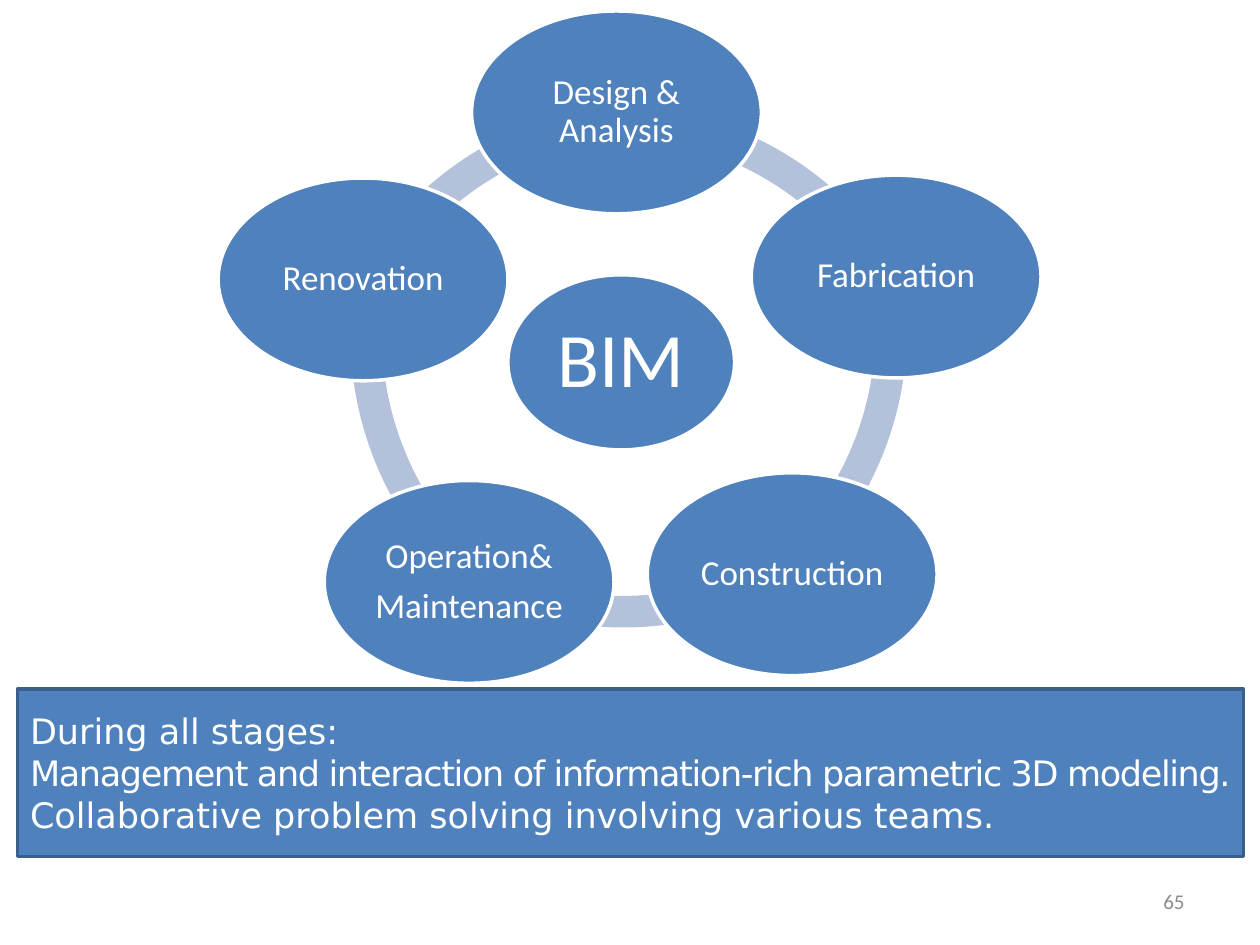
from pptx import Presentation
from pptx.dml.color import RGBColor
from pptx.enum import shapes, text
from pptx.util import Pt

BLUE = RGBColor(0x4F, 0x81, 0xBD)
EDGE = RGBColor(0x3A, 0x5F, 0x8C)
PALE = RGBColor(0xB3, 0xC1, 0xDB)
GRAY = RGBColor(0x8C, 0x8C, 0x8C)
WHITE = RGBColor(0xFF, 0xFF, 0xFF)

ARC_SIZE = 388.1
ARC_THICKNESS = 0.05 * 0.93
STAGE_W, STAGE_H = 165.6, 115.9

# left, top, start and end adjustments
ARCS = [
    (178.6, 58.3, 125.64, 158.27),
    (200.2, -2.9, 79.11, 113.74),
    (162, -29.5, 35.69, 70.69),
    (130.3, -6.5, 210.54, 28.59),
    (154.1, 59.8, 162.64, 197.78),
]
STAGES = [
    (269.5, 6.3, ["Design & Analysis"]),
    (429.3, 100.1, ["Fabrication"]),
    (369.9, 270.2, ["Construction"]),
    (185.3, 274.6, ["Operation&", "Maintenance"]),
    (124.7, 101.7, ["Renovation"]),
]
# text and letter spacing in hundredths of a point
SUMMARY = [
    ("During all stages:", 0),
    ("Management and interaction of information‐rich parametric 3D modeling.", -80),
    ("Collaborative problem solving involving various teams.", 0),
]


def add_filled(s, kind, left, top, width, height, fill, line=None):
    sp = s.shapes.add_shape(kind, Pt(left), Pt(top), Pt(width), Pt(height))
    sp.shadow.inherit = False
    sp.fill.solid()
    sp.fill.fore_color.rgb = fill
    if line is None:
        sp.line.fill.background()
    else:
        sp.line.color.rgb = line
        sp.line.width = Pt(2)
    return sp


def write(tf, lines, size, font, color, align):
    tf.word_wrap = True
    tf.vertical_anchor = text.MSO_ANCHOR.MIDDLE
    for i, line in enumerate(lines):
        p = tf.add_paragraph() if i else tf.paragraphs[0]
        p.add_run().text = line
        p.alignment = align
        p.font.size = Pt(size)
        p.font.name = font
        p.font.color.rgb = color


def add_arc(s, left, top, start, end):
    sp = add_filled(s, shapes.MSO_SHAPE.BLOCK_ARC, left, top, ARC_SIZE, ARC_SIZE, PALE)
    for i, value in enumerate((start, end, ARC_THICKNESS)):
        sp.adjustments[i] = value


def add_bubble(s, left, top, width, height, lines, size, inset):
    sp = add_filled(s, shapes.MSO_SHAPE.OVAL, left, top, width, height, BLUE, WHITE)
    tf = sp.text_frame
    tf.margin_left = tf.margin_right = tf.margin_top = tf.margin_bottom = Pt(inset)
    write(tf, lines, size, "Calibri", WHITE, text.PP_ALIGN.CENTER)
    for p in tf.paragraphs:
        p.line_spacing = 0.9
        p.space_after = Pt(size * 0.35)


def add_summary(s):
    sp = add_filled(s, shapes.MSO_SHAPE.RECTANGLE, 10.1, 393.8, 700.6, 95.8, BLUE, EDGE)
    write(sp.text_frame, [line for line, _ in SUMMARY], 20, "DejaVu Sans", WHITE,
          text.PP_ALIGN.LEFT)
    for p, (_, spacing) in zip(sp.text_frame.paragraphs, SUMMARY):
        if spacing:
            p.runs[0].font._element.set("spc", str(spacing))


def add_page_number(s, number):
    sp = s.shapes.add_textbox(Pt(516.2), Pt(500.4), Pt(167.8), Pt(28.8))
    write(sp.text_frame, [number], 12, "Calibri", GRAY, text.PP_ALIGN.RIGHT)


def main():
    prs = Presentation()
    prs.slide_width, prs.slide_height = Pt(720), Pt(540)
    s = prs.slides.add_slide(prs.slide_layouts[6])
    for arc in ARCS:
        add_arc(s, *arc)
    add_bubble(s, 290.2, 157, 129.6, 100.1, ["BIM"], 44, 4.4)
    for left, top, lines in STAGES:
        add_bubble(s, left, top, STAGE_W, STAGE_H, lines, 20, 2)
    add_summary(s)
    add_page_number(s, "65")
    prs.save("out.pptx")


if __name__ == "__main__":
    main()
